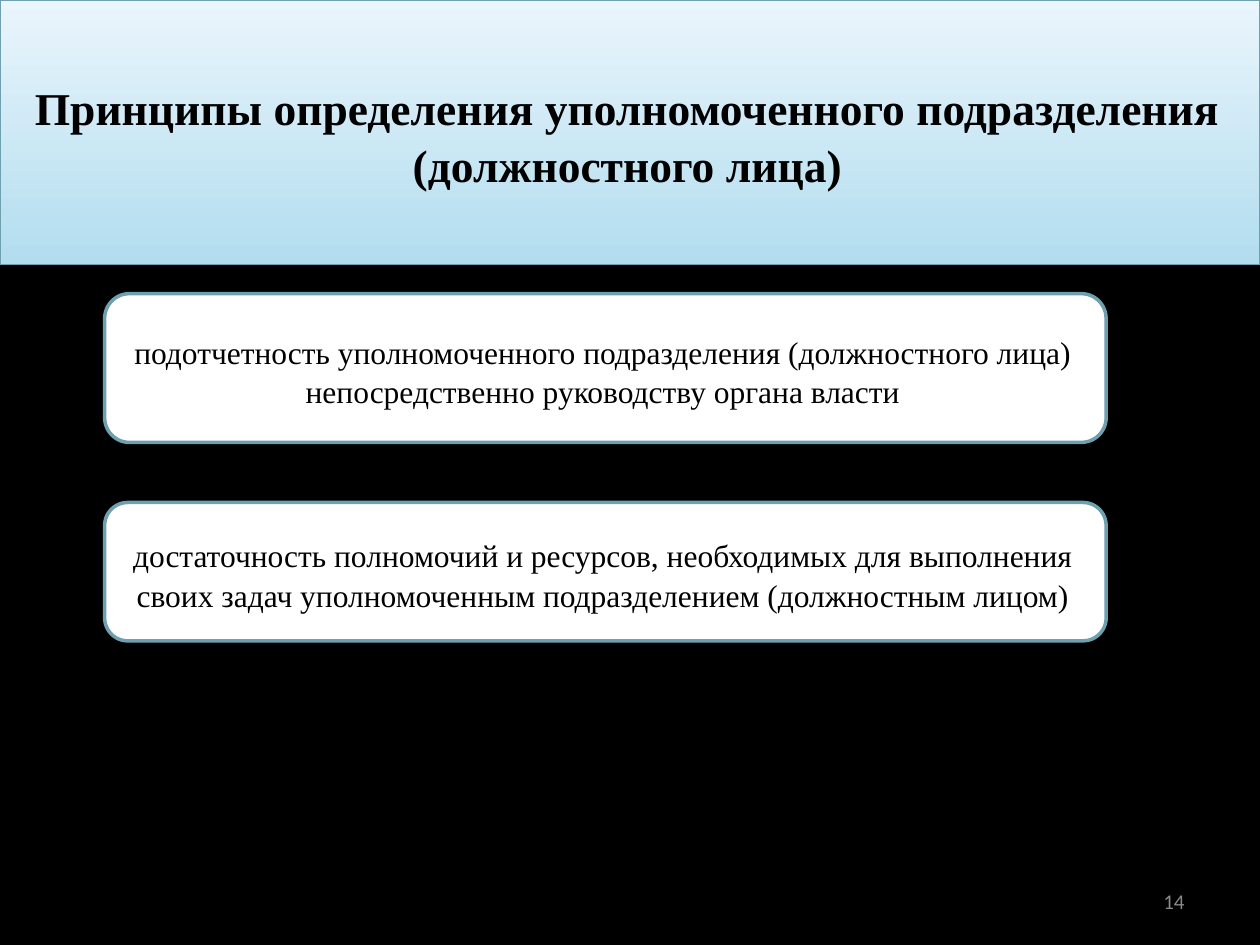
import dataclasses

import pptx
import pptx.dml.color
import pptx.enum.shapes
import pptx.enum.text
import pptx.util

Cm = pptx.util.Cm
Pt = pptx.util.Pt
Shape = pptx.enum.shapes.MSO_SHAPE
Align = pptx.enum.text.PP_ALIGN


def rgb(value):
    return pptx.dml.color.RGBColor.from_string(value)


@dataclasses.dataclass(frozen=True)
class Theme:
    background: str = "000000"
    banner_top: str = "EAF5FC"
    banner_bottom: str = "B2DDEF"
    card: str = "FFFFFF"
    outline: str = "6EA0B0"
    ink: str = "000000"
    muted: str = "898989"
    serif: str = "Times New Roman"
    sans: str = "Calibri"
    title_size: int = 26
    body_size: int = 18
    number_size: int = 12


def write_text(frame, text, *, font, size, color, bold=False,
               align=Align.CENTER, spacing=1.0):
    frame.word_wrap = True
    frame.vertical_anchor = pptx.enum.text.MSO_ANCHOR.MIDDLE
    para = frame.paragraphs[0]
    para.alignment = align
    para.line_spacing = spacing
    span = para.add_run()
    span.text = text
    span.font.name = font
    span.font.size = Pt(size)
    span.font.bold = bold
    span.font.color.rgb = rgb(color)


class PageBuilder:
    def __init__(self, page, theme):
        self.page = page
        self.theme = theme
        fill = page.background.fill
        fill.solid()
        fill.fore_color.rgb = rgb(theme.background)

    def outlined_box(self, kind, left, top, width, height, line_width, text,
                     **style):
        box = self.page.shapes.add_shape(
            kind, Cm(left), Cm(top), Cm(width), Cm(height))
        box.shadow.inherit = False
        box.line.color.rgb = rgb(self.theme.outline)
        box.line.width = Pt(line_width)
        frame = box.text_frame
        frame.margin_left = frame.margin_top = Cm(0.3)
        frame.margin_right = Cm(0.4)
        frame.margin_bottom = Cm(0.2)
        write_text(frame, text, font=self.theme.serif, color=self.theme.ink,
                   spacing=1.05, **style)
        return box

    def banner(self, text, width, height):
        box = self.outlined_box(Shape.RECTANGLE, 0, 0, width, height, 0.75,
                                text, size=self.theme.title_size, bold=True)
        box.fill.gradient()
        box.fill.gradient_angle = 270
        colors = (self.theme.banner_top, self.theme.banner_bottom)
        for stop, color in zip(box.fill.gradient_stops, colors):
            stop.color.rgb = rgb(color)

    def card(self, text, top, height):
        box = self.outlined_box(Shape.ROUNDED_RECTANGLE, 2.11, top, 20.19,
                                height, 2, text, size=self.theme.body_size)
        box.fill.solid()
        box.fill.fore_color.rgb = rgb(self.theme.card)

    def page_number(self, text):
        box = self.page.shapes.add_textbox(
            Cm(18.21), Cm(17.65), Cm(5.92), Cm(1.02))
        write_text(box.text_frame, text, font=self.theme.sans,
                   size=self.theme.number_size, color=self.theme.muted,
                   align=Align.RIGHT)


def main():
    deck = pptx.Presentation()
    deck.slide_width, deck.slide_height = Cm(25.4), Cm(19.05)
    builder = PageBuilder(deck.slides.add_slide(deck.slide_layouts[6]), Theme())
    builder.page_number("14")
    builder.banner("Принципы определения уполномоченного подразделения "
                   "(должностного лица)", 25.4, 5.33)
    builder.card("подотчетность уполномоченного подразделения (должностного "
                 "лица) непосредственно руководству органа власти", 5.92, 3)
    builder.card("достаточность полномочий и ресурсов, необходимых для "
                 "выполнения своих задач уполномоченным подразделением "
                 "(должностным лицом)", 10.13, 2.79)
    deck.save("out.pptx")


if __name__ == "__main__":
    main()
